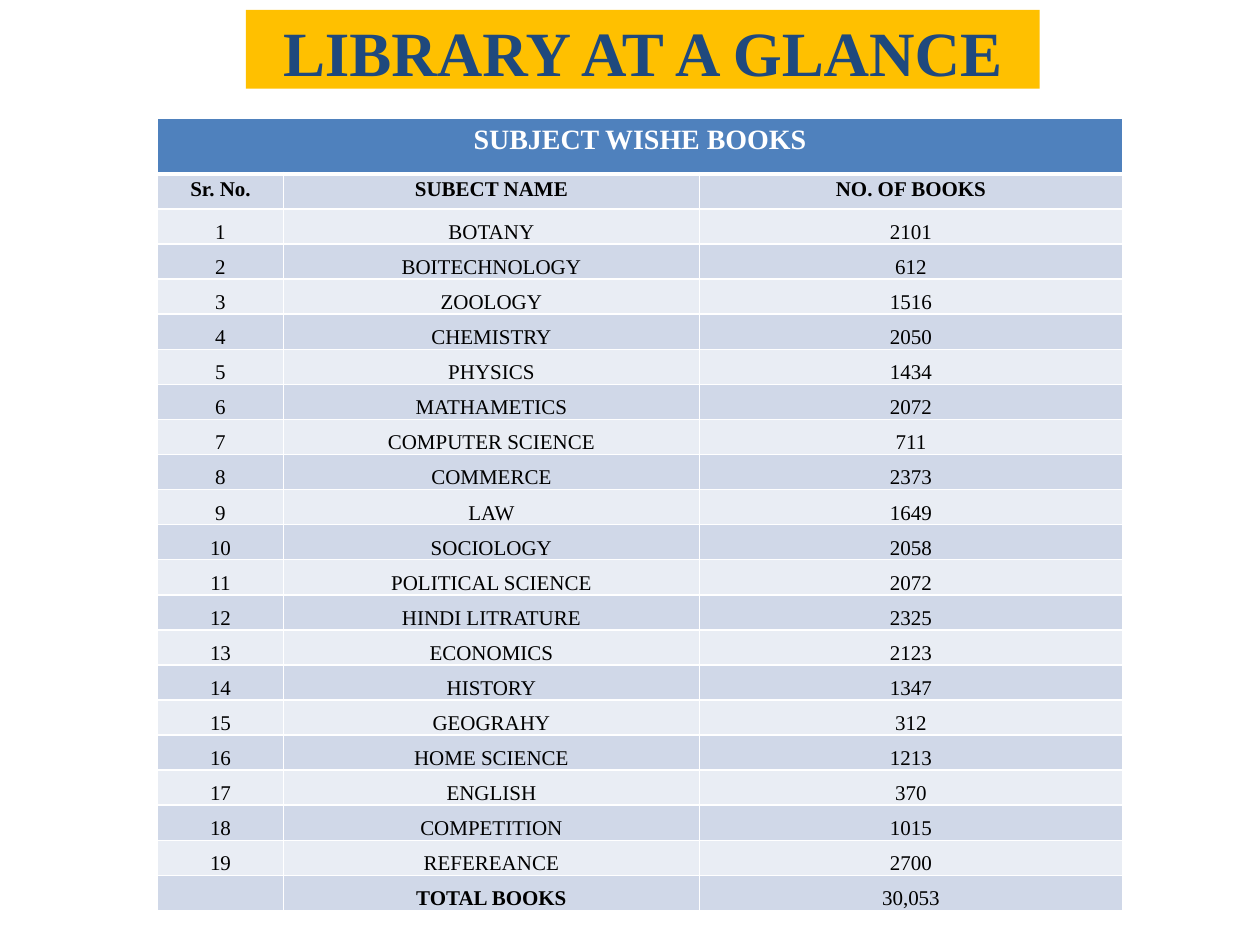
import pptx
import pptx.dml.color
import pptx.enum.shapes
import pptx.enum.text
import pptx.oxml
import pptx.oxml.ns
import pptx.util
from lxml import etree

Pt = pptx.util.Pt
RGBColor = pptx.dml.color.RGBColor
ANCHOR = pptx.enum.text.MSO_ANCHOR

# Content
TITLE = "LIBRARY AT A GLANCE"
TABLE_TITLE = "SUBJECT WISHE BOOKS"
COLUMN_NAMES = ("Sr. No.", "SUBECT NAME", "NO. OF BOOKS")
BOOKS = [
    ("BOTANY", "2101"),
    ("BOITECHNOLOGY", "612"),
    ("ZOOLOGY", "1516"),
    ("CHEMISTRY", "2050"),
    ("PHYSICS", "1434"),
    ("MATHAMETICS", "2072"),
    ("COMPUTER SCIENCE", "711"),
    ("COMMERCE", "2373"),
    ("LAW", "1649"),
    ("SOCIOLOGY", "2058"),
    ("POLITICAL SCIENCE", "2072"),
    ("HINDI LITRATURE", "2325"),
    ("ECONOMICS", "2123"),
    ("HISTORY", "1347"),
    ("GEOGRAHY", "312"),
    ("HOME SCIENCE", "1213"),
    ("ENGLISH", "370"),
    ("COMPETITION", "1015"),
    ("REFEREANCE", "2700"),
]
TOTAL = ("", "TOTAL BOOKS", "30,053")

# Format
FONT = "Times New Roman"
GOLD = RGBColor(0xFF, 0xC0, 0x00)
NAVY = RGBColor(0x1F, 0x49, 0x7D)
BLUE = RGBColor(0x4F, 0x81, 0xBD)
BAND_DARK = RGBColor(0xD0, 0xD8, 0xE8)
BAND_LIGHT = RGBColor(0xE9, 0xED, 0xF4)
WHITE = RGBColor(0xFF, 0xFF, 0xFF)
BLACK = RGBColor(0x00, 0x00, 0x00)

TABLE_LEFT, TABLE_TOP = 90, 67.8
COLUMN_WIDTHS = (72, 237.6, 241.9)
TITLE_ROW_HEIGHT, ROW_HEIGHT = 31.6, 20.05
SIDE_MARGIN = 5


def write_text(frame, text, size=12, color=BLACK, bold=False, spacing=None):
    paragraph = frame.paragraphs[0]
    paragraph.alignment = pptx.enum.text.PP_ALIGN.CENTER
    if spacing:
        paragraph.line_spacing = spacing
    if not text:
        # The end mark sets the line height of an empty cell
        end = etree.SubElement(paragraph._p, pptx.oxml.ns.qn("a:endParaRPr"))
        end.set("sz", str(size * 100))
        return
    run = paragraph.add_run()
    run.text = text
    run.font.name = FONT
    run.font.size = Pt(size)
    run.font.bold = bold
    run.font.color.rgb = color


def format_cell(cell, fill, top=1, bottom=1):
    properties = cell._tc.get_or_add_tcPr()
    for side, width in (("L", 1), ("R", 1), ("T", top), ("B", bottom)):
        properties.append(pptx.oxml.parse_xml(
            f'<a:ln{side} {pptx.oxml.ns.nsdecls("a")} w="{Pt(width)}">'
            f'<a:solidFill><a:srgbClr val="{WHITE}"/></a:solidFill></a:ln{side}>'))
    cell.fill.solid()
    cell.fill.fore_color.rgb = fill


presentation = pptx.Presentation()
presentation.slide_width, presentation.slide_height = Pt(720), Pt(540)
slide = presentation.slides.add_slide(presentation.slide_layouts[6])

# Title banner
banner = slide.shapes.add_shape(
    pptx.enum.shapes.MSO_SHAPE.RECTANGLE, Pt(140.5), Pt(5.7), Pt(453.6), Pt(45))
banner.shadow.inherit = False
banner.fill.solid()
banner.fill.fore_color.rgb = GOLD
banner.line.fill.background()
frame = banner.text_frame
frame.word_wrap = True
frame.vertical_anchor = ANCHOR.BOTTOM
frame.margin_left = frame.margin_right = frame.margin_top = frame.margin_bottom = 0
write_text(frame, TITLE, size=36, color=NAVY, bold=True)

# Table grid
rows = [COLUMN_NAMES]
rows += [(str(number), *book) for number, book in enumerate(BOOKS, start=1)]
rows.append(TOTAL)
table = slide.shapes.add_table(
    len(rows) + 1, len(COLUMN_WIDTHS), Pt(TABLE_LEFT), Pt(TABLE_TOP),
    Pt(sum(COLUMN_WIDTHS)), Pt(TITLE_ROW_HEIGHT + ROW_HEIGHT * len(rows))).table
for column, width in zip(table.columns, COLUMN_WIDTHS):
    column.width = Pt(width)
for index, row in enumerate(table.rows):
    row.height = Pt(ROW_HEIGHT if index else TITLE_ROW_HEIGHT)

# Table title across all columns
for cell in table.rows[0].cells:
    format_cell(cell, BLUE, bottom=3)
table.cell(0, 0).merge(table.cell(0, len(COLUMN_WIDTHS) - 1))
write_text(table.cell(0, 0).text_frame, TABLE_TITLE, size=16, color=WHITE, bold=True)

# Column names, subjects and total
for row_index, values in enumerate(rows, start=1):
    is_header = row_index == 1
    for column_index, value in enumerate(values):
        cell = table.cell(row_index, column_index)
        cell.margin_left = cell.margin_right = Pt(SIDE_MARGIN)
        cell.margin_top = cell.margin_bottom = 0
        cell.vertical_anchor = ANCHOR.TOP if is_header else ANCHOR.BOTTOM
        format_cell(cell, BAND_DARK if row_index % 2 else BAND_LIGHT,
                    top=3 if is_header else 1)
        write_text(cell.text_frame, value, spacing=1.15,
                   bold=is_header or value == TOTAL[1])

# The total row keeps the dark band
for cell in table.rows[len(rows)].cells:
    cell.fill.fore_color.rgb = BAND_DARK

presentation.save("out.pptx")
